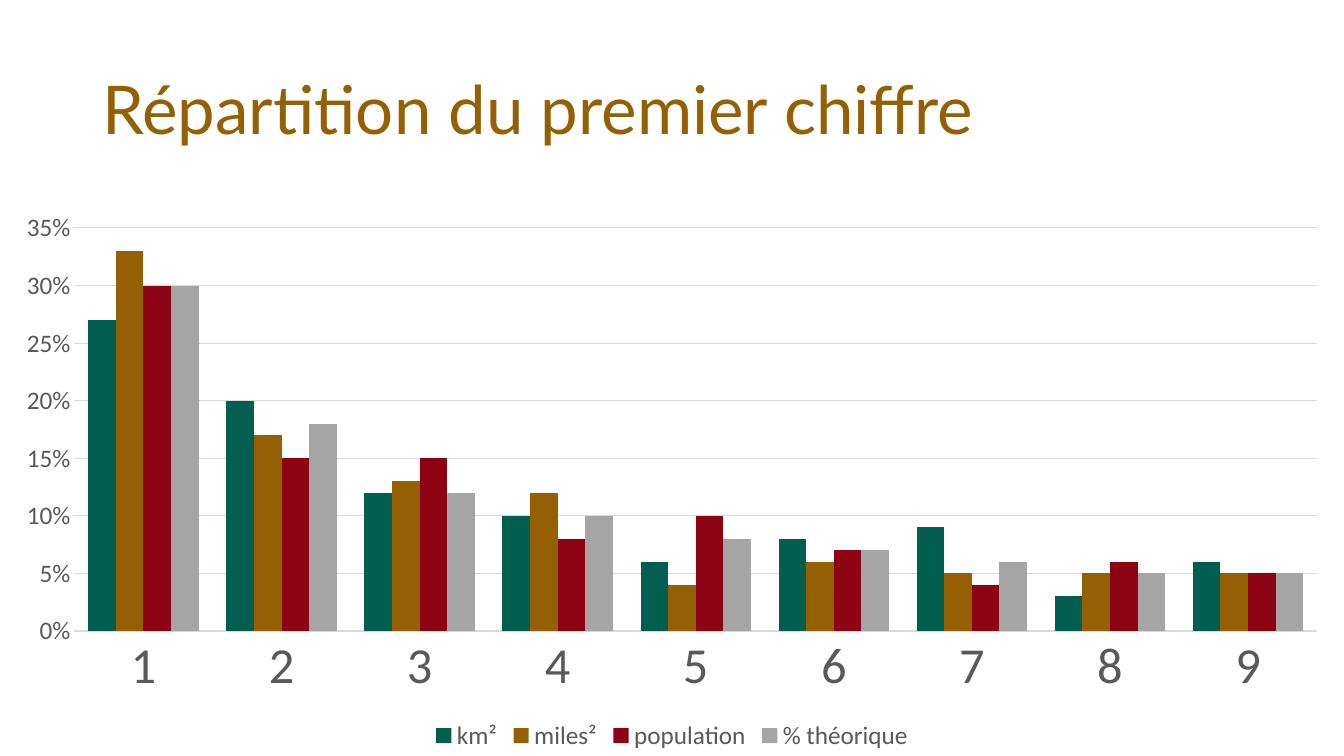
from pptx import Presentation
from pptx.chart.data import CategoryChartData
from pptx.dml.color import RGBColor
from pptx.enum.chart import XL_CHART_TYPE, XL_LEGEND_POSITION, XL_TICK_MARK
from pptx.enum.text import MSO_ANCHOR
from pptx.util import Cm, Pt

# Content
TITLE = "Répartition du premier chiffre"
DIGITS = ["1", "2", "3", "4", "5", "6", "7", "8", "9"]
SERIES = [
    ("km²", "025E4F", (0.27, 0.20, 0.12, 0.10, 0.06, 0.08, 0.09, 0.03, 0.06)),
    ("miles²", "946003", (0.33, 0.17, 0.13, 0.12, 0.04, 0.06, 0.05, 0.05, 0.05)),
    ("population", "8E0313", (0.30, 0.15, 0.15, 0.08, 0.10, 0.07, 0.04, 0.06, 0.05)),
    ("% théorique", "A5A5A5", (0.30, 0.18, 0.12, 0.10, 0.08, 0.07, 0.06, 0.05, 0.05)),
]
TITLE_COLOR, LABEL_COLOR, LINE_COLOR = "946003", "595959", "D9D9D9"


def color(hex_code):
    return RGBColor.from_string(hex_code)


def style_font(font, name, size, hex_code):
    font.name = name
    font.size = Pt(size)
    font.color.rgb = color(hex_code)


def style_line(line):
    line.color.rgb = color(LINE_COLOR)
    line.width = Pt(0.75)


def add_title(slide):
    frame = slide.shapes.add_textbox(Cm(2.33), Cm(1.01), Cm(29.21), Cm(3.68)).text_frame
    frame.word_wrap = True
    frame.vertical_anchor = MSO_ANCHOR.MIDDLE
    paragraph = frame.paragraphs[0]
    paragraph.line_spacing = 0.9
    run = paragraph.add_run()
    run.text = TITLE
    style_font(run.font, "Lato", 48, TITLE_COLOR)


def add_distribution_chart(slide, width, height):
    data = CategoryChartData(number_format="0%")
    data.categories = DIGITS
    for name, _, values in SERIES:
        data.add_series(name, values)
    top = Cm(5.08)
    chart = slide.shapes.add_chart(
        XL_CHART_TYPE.COLUMN_CLUSTERED, 0, top, width, height - top, data).chart
    chart.has_title = False
    style_font(chart.font, "Calibri", 10, "000000")

    # Columns
    plot = chart.plots[0]
    plot.gap_width = 100
    plot.overlap = 0
    plot.vary_by_categories = False
    for series, (_, hex_code, _) in zip(plot.series, SERIES):
        series.format.fill.solid()
        series.format.fill.fore_color.rgb = color(hex_code)

    # Axes
    for axis, size in ((chart.category_axis, 36), (chart.value_axis, 18)):
        axis.major_tick_mark = axis.minor_tick_mark = XL_TICK_MARK.NONE
        style_font(axis.tick_labels.font, "Calibri", size, LABEL_COLOR)
    style_line(chart.category_axis.format.line)
    value_axis = chart.value_axis
    value_axis.minimum_scale, value_axis.maximum_scale = 0, 0.35
    value_axis.major_unit = 0.05
    value_axis.tick_labels.number_format = "0%"
    value_axis.tick_labels.number_format_is_linked = False
    value_axis.format.line.fill.background()
    value_axis.has_major_gridlines = True
    style_line(value_axis.major_gridlines.format.line)

    # Legend
    chart.has_legend = True
    chart.legend.position = XL_LEGEND_POSITION.BOTTOM
    chart.legend.include_in_layout = False
    style_font(chart.legend.font, "Calibri", 18, LABEL_COLOR)


def main():
    presentation = Presentation()
    presentation.slide_width, presentation.slide_height = Cm(33.87), Cm(19.05)
    slide = presentation.slides.add_slide(presentation.slide_layouts[6])
    add_title(slide)
    add_distribution_chart(slide, presentation.slide_width, presentation.slide_height)
    presentation.save("out.pptx")


if __name__ == "__main__":
    main()
